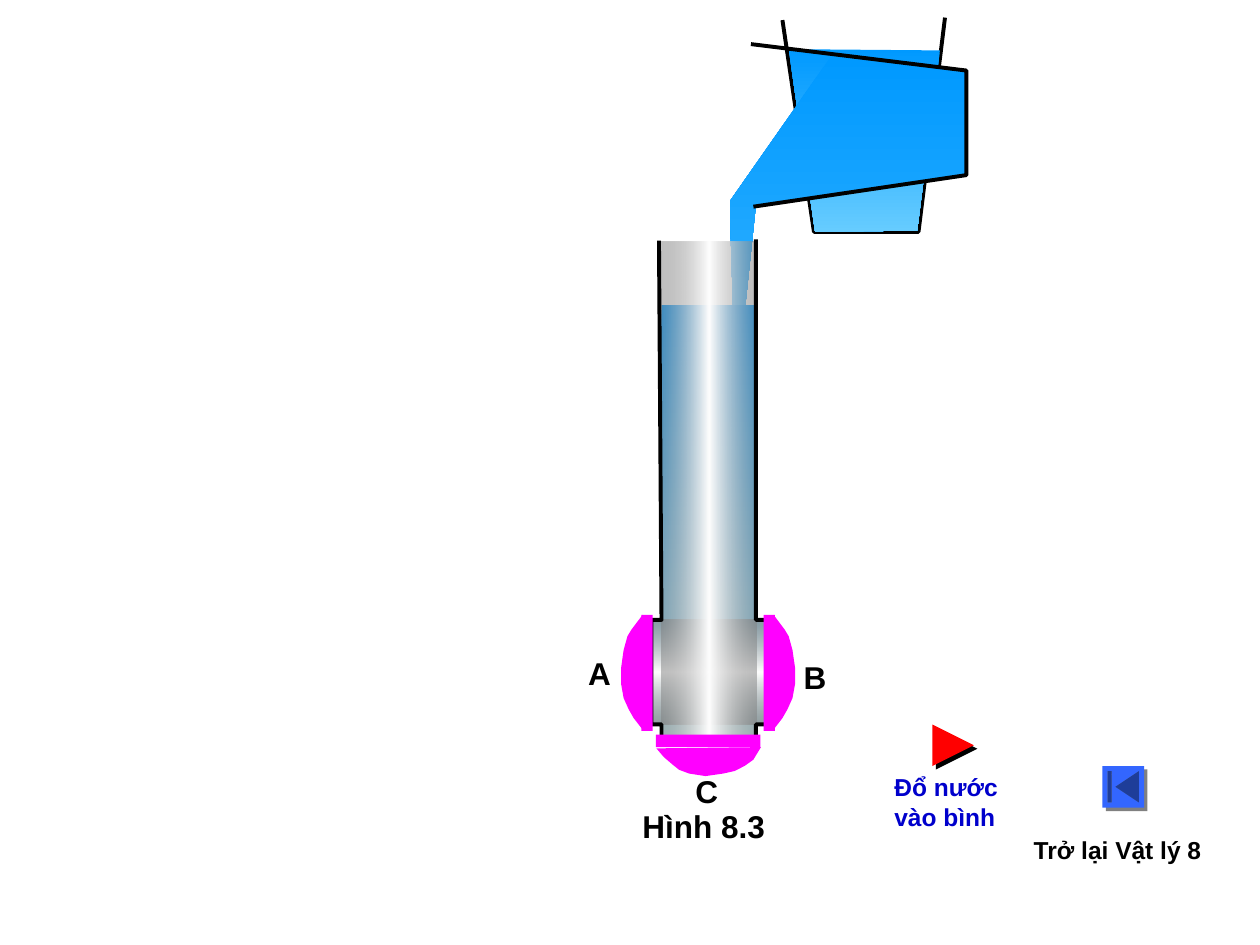
from lxml.etree import SubElement
from pptx import Presentation
from pptx.dml.color import RGBColor
from pptx.enum.shapes import MSO_SHAPE
from pptx.enum.text import PP_ALIGN
from pptx.oxml.ns import qn
from pptx.util import Cm, Pt

RECTANGLE = MSO_SHAPE.RECTANGLE
TRIANGLE = MSO_SHAPE.FLOWCHART_MERGE
BACK_BUTTON = MSO_SHAPE.ACTION_BUTTON_BEGINNING
LEFT, CENTER = PP_ALIGN.LEFT, PP_ALIGN.CENTER

BLACK, MAGENTA = "000000", "FF00FF"
CUP_WATER = [(0, "0099FF", 100), (100, "66CCFF", 100)]
TUBE_WATER = [(0, "0099FF", 100), (100, "BBE0E3", 100)]
DOWN, ACROSS = 90, 0


def length(inches):
    return Cm(inches * 2.54)


def color(value):
    return RGBColor.from_string(value)


def glass(opacity):
    return [(0, "808080", opacity), (50, "FFFFFF", 100), (100, "808080", opacity)]


def add_color(parent, value, opacity=100):
    node = SubElement(parent, qn("a:srgbClr"), val=value)
    if opacity < 100:
        SubElement(node, qn("a:alpha"), val=str(opacity * 1000))


def paint(shape, fill=None, angle=DOWN, line=None):
    """Fill with a hex colour, a list of gradient stops, or nothing."""
    shape.shadow.inherit = False
    if fill is None:
        shape.fill.background()
    elif isinstance(fill, str):
        shape.fill.solid()
        shape.fill.fore_color.rgb = color(fill)
    else:
        shape.fill.gradient()
        gradient = shape.fill._xPr.find(qn("a:gradFill"))
        gradient.clear()
        stops = SubElement(gradient, qn("a:gsLst"))
        for position, value, opacity in fill:
            stop = SubElement(stops, qn("a:gs"), pos=str(position * 1000))
            add_color(stop, value, opacity)
        SubElement(gradient, qn("a:lin"), ang=str(angle * 60000), scaled="1")
    if line:
        shape.line.color.rgb = color(line)
        shape.line.width = Pt(2.25)
    else:
        shape.line.fill.background()


def add_outline(page, left, top, points, closed=True, **style):
    corners = [(length(left + x), length(top + y)) for x, y in points]
    builder = page.shapes.build_freeform(*corners[0])
    builder.add_line_segments(corners[1:], close=closed)
    paint(builder.convert_to_shape(), **style)


def add_block(page, left, top, width, height, kind=RECTANGLE, **style):
    box = page.shapes.add_shape(
        kind, length(left), length(top), length(width), length(height))
    paint(box, **style)
    return box


def cast_shadow(shape, value):
    effects = shape._element.spPr.find(qn("a:effectLst"))
    shadow = SubElement(effects, qn("a:outerShdw"), dist=str(Pt(2.8)),
                        dir=str(45 * 60000), algn="ctr", rotWithShape="0")
    add_color(shadow, value)


def add_label(page, text, left, top, width, height, size=18, ink=BLACK, align=LEFT):
    box = page.shapes.add_textbox(
        length(left), length(top), length(width), length(height))
    box.text_frame.word_wrap = True
    para = box.text_frame.paragraphs[0]
    para.alignment = align
    span = para.add_run()
    span.text = text
    span.font.name = "Arial"
    span.font.size = Pt(size)
    span.font.bold = True
    span.font.color.rgb = color(ink)


def draw_upright_cup(page, left, top):
    add_outline(page, left, top, [(0, 0.02), (0.25, 1.7), (1.08, 1.7), (1.29, 0)],
                closed=False, line=BLACK)
    add_outline(page, left, top, [(0.05, 0.25), (1.25, 0.26), (1.07, 1.69), (0.26, 1.7)],
                fill=CUP_WATER)


def draw_pouring_water(page, left, top):
    add_outline(page, left, top,
                [(0, 1.16), (0.81, 0), (1.87, 0.13), (1.88, 0.94), (0.21, 1.18),
                 (0.13, 1.94), (0.03, 4.72), (0.02, 1.77)], fill=CUP_WATER)


def draw_tilted_cup(page, left, top):
    add_outline(page, left, top, [(0.02, 1.29), (1.71, 1.04), (1.71, 0.21), (0, 0)],
                closed=False, line=BLACK)


def draw_tube(page, axis, top):
    """Cross-shaped tube, symmetric about axis, holding water."""
    arm_top, arm_bottom, bottom = 3.02, 3.85, 4
    half, arm = 0.375, 0.455

    def wall(side, rim):
        return [(side * half, rim), (side * half, arm_top), (side * arm, arm_top),
                (side * arm, arm_bottom), (side * half, arm_bottom)]

    def profile(rim, base):
        return (wall(-1, rim) + [(-half, base), (half, base)] + wall(1, rim)[::-1])

    add_outline(page, axis, top, profile(0.52, 4.02), fill=TUBE_WATER)
    add_block(page, axis - 0.475, top + arm_top, 1, arm_bottom - arm_top, fill=glass(67))
    add_block(page, axis - half, top + 0.02, 2 * half, 3.97,
              fill=glass(49), angle=ACROSS)
    walls = profile(0, bottom)
    walls[0] = (-half - 0.02, 0.01)
    add_outline(page, axis, top, walls, closed=False, line=BLACK)


def draw_membranes(page, axis, top):
    """Two mirrored side membranes and one below, bulging outwards."""
    bulge = [(0.52, 0), (0.52, 0.91), (0.59, 0.82), (0.63, 0.75), (0.67, 0.66),
             (0.69, 0.55), (0.69, 0.42), (0.67, 0.28), (0.64, 0.17), (0.61, 0.12)]
    for side in (1, -1):
        add_block(page, axis + side * 0.485 - 0.045, top, 0.09, 0.92, fill=MAGENTA)
        add_outline(page, axis, top, [(side * x, y) for x, y in bulge], fill=MAGENTA)
    add_block(page, axis - 0.415, top + 0.95, 0.83, 0.1, fill=MAGENTA)
    add_outline(page, axis, top,
                [(-0.41, 1.06), (0.42, 1.05), (0.36, 1.15), (0.29, 1.2), (0.21, 1.24),
                 (0.12, 1.26), (-0.02, 1.28), (-0.15, 1.26), (-0.23, 1.23),
                 (-0.28, 1.19), (-0.35, 1.13)], fill=MAGENTA)


def draw_captions(page, left, top):
    for letter, x, y in (("A", 0, 0), ("B", 1.71, 0.03), ("C", 0.85, 0.94)):
        add_label(page, letter, left + x, top + y, 0.42, 0.4)
    add_label(page, "Hình 8.3", left + 0.43, top + 1.22, 1.25, 0.4)


def draw_controls(page, left, top):
    play = add_block(page, left + 0.4, top, 0.33, 0.33, TRIANGLE, fill="FF0000")
    play.rotation = 270
    cast_shadow(play, BLACK)
    add_label(page, "Đổ nước vào bình", left, top + 0.33, 1.17, 0.57,
              size=14, ink="0000CC")
    back = add_block(page, left + 1.75, top + 0.33, 0.33, 0.33, BACK_BUTTON, fill="3366FF")
    cast_shadow(back, "808080")
    add_label(page, "Trở lại Vật lý 8", left + 1.08, top + 0.83, 1.58, 0.33,
              size=14, align=CENTER)


def main():
    deck = Presentation()
    deck.slide_width, deck.slide_height = length(10), length(7.5)
    page = deck.slides.add_slide(deck.slide_layouts[6])
    draw_upright_cup(page, 6.21, 0.14)
    draw_pouring_water(page, 5.79, 0.44)
    draw_tube(page, 5.625, 1.9)
    draw_membranes(page, 5.62, 4.88)
    draw_tilted_cup(page, 5.96, 0.35)
    draw_captions(page, 4.57, 5.14)
    draw_controls(page, 7, 5.75)
    deck.save("out.pptx")


if __name__ == "__main__":
    main()
